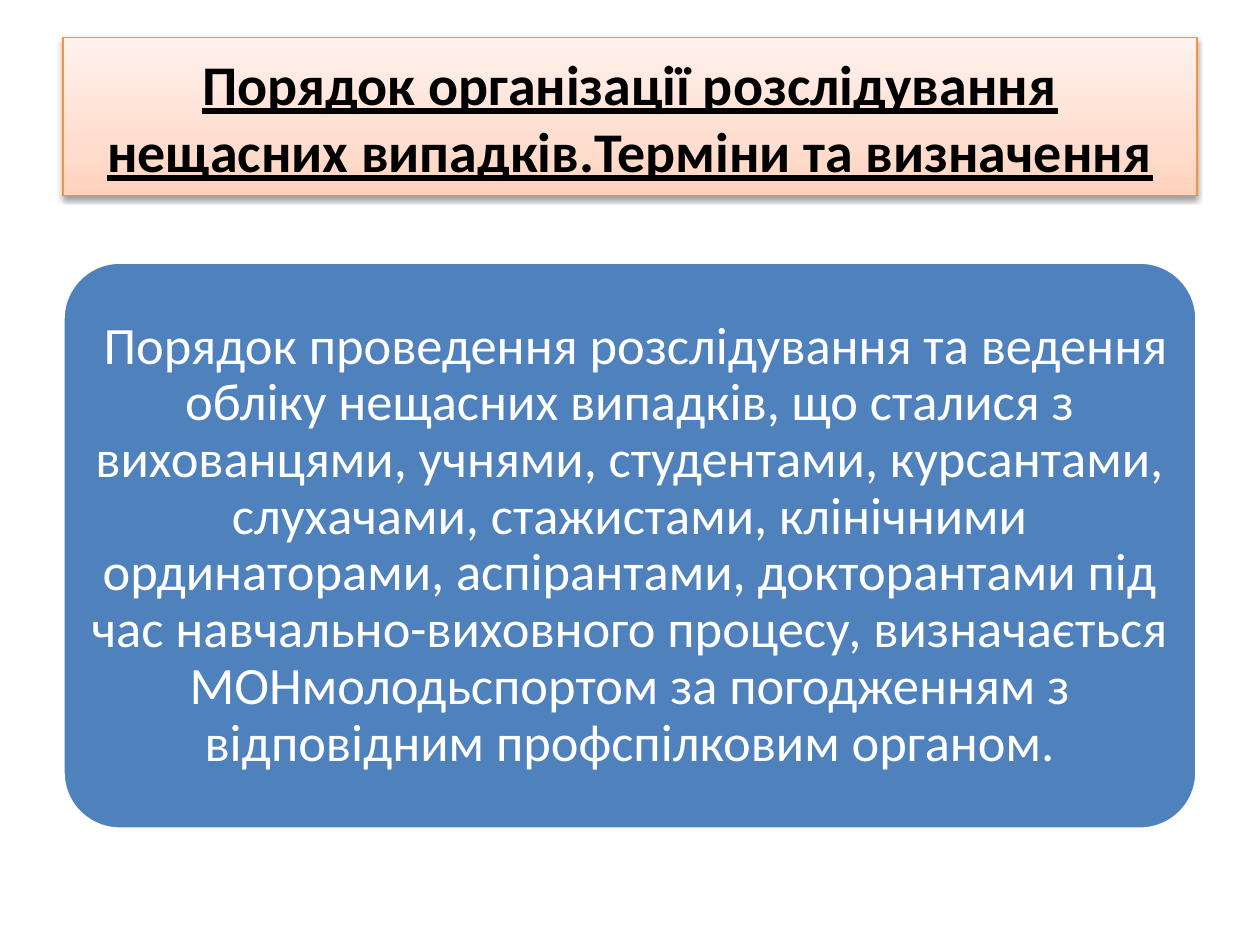
from lxml import etree
from pptx import Presentation
from pptx.dml.color import RGBColor
from pptx.enum import shapes, text
from pptx.oxml import ns
from pptx.util import Pt

HUES = {
    "text": "000000",
    "light": "FFFFFF",
    "panel": "4F81BD",
    "edge": "F69240",
    "deep": "FFD2BD",
    "mid": "FFDED0",
    "pale": "FFF2ED",
}
FONT = "Calibri"
TITLE = "Порядок організації розслідування нещасних випадків.Терміни та визначення"
BODY = (
    " Порядок проведення розслідування та ведення обліку нещасних випадків, "
    "що сталися з вихованцями, учнями, студентами, курсантами, слухачами, "
    "стажистами, клінічними ординаторами, аспірантами, докторантами під час "
    "навчально-виховного процесу, визначається МОНмолодьспортом за "
    "погодженням з відповідним профспілковим органом."
)


def color(name):
    return RGBColor.from_string(HUES[name])


def node(root, tag, **attrs):
    vals = {key: str(val) for key, val in attrs.items()}
    return etree.SubElement(root, ns.qn(tag), vals)


def add_box(slide, kind, box, edge, width):
    shape = slide.shapes.add_shape(kind, *[Pt(n) for n in box])
    shape.shadow.inherit = False
    shape.line.color.rgb = color(edge)
    shape.line.width = Pt(width)
    return shape


def write(shape, words, size, hue):
    frame = shape.text_frame
    frame.word_wrap = True
    frame.vertical_anchor = text.MSO_ANCHOR.MIDDLE
    frame.text = words
    para = frame.paragraphs[0]
    para.alignment = text.PP_ALIGN.CENTER
    font = para.runs[0].font
    font.name = FONT
    font.size = Pt(size)
    font.color.rgb = color(hue)
    return para


def shade(shape):
    shape.fill.gradient()
    shape.fill.gradient_angle = 90
    props = shape._element.spPr
    stops = props.find(ns.qn("a:gradFill")).find(ns.qn("a:gsLst"))
    for stop in list(stops):
        stops.remove(stop)
    for part, name in ((0, "deep"), (35, "mid"), (100, "pale")):
        stop = node(stops, "a:gs", pos=part * 1000)
        node(stop, "a:srgbClr", val=HUES[name])
    cast = node(
        props.find(ns.qn("a:effectLst")), "a:outerShdw",
        blurRad=Pt(3.1), dist=Pt(1.6), dir=5400000, rotWithShape=0,
    )
    tint = node(cast, "a:srgbClr", val=HUES["text"])
    node(tint, "a:alpha", val=38000)


def add_title(slide, box):
    shape = add_box(slide, shapes.MSO_SHAPE.RECTANGLE, box, "edge", 0.75)
    shade(shape)
    font = write(shape, TITLE, 32, "text").runs[0].font
    font.bold = True
    font.underline = True


def add_panel(slide, box):
    kind = shapes.MSO_SHAPE.ROUNDED_RECTANGLE
    shape = add_box(slide, kind, box, "light", 2)
    shape.adjustments[0] = 0.1
    shape.fill.solid()
    shape.fill.fore_color.rgb = color("panel")
    frame = shape.text_frame
    frame.margin_left = frame.margin_right = Pt(4.5)
    frame.margin_top = frame.margin_bottom = Pt(3)
    write(shape, BODY, 30, "light").line_spacing = 0.9


def main():
    deck = Presentation()
    deck.slide_width, deck.slide_height = Pt(720), Pt(540)
    slide = deck.slides.add_slide(deck.slide_layouts[6])
    add_title(slide, (36, 21.6, 648, 90))
    add_panel(slide, (36, 149.8, 648, 324))
    deck.save("out.pptx")


if __name__ == "__main__":
    main()
